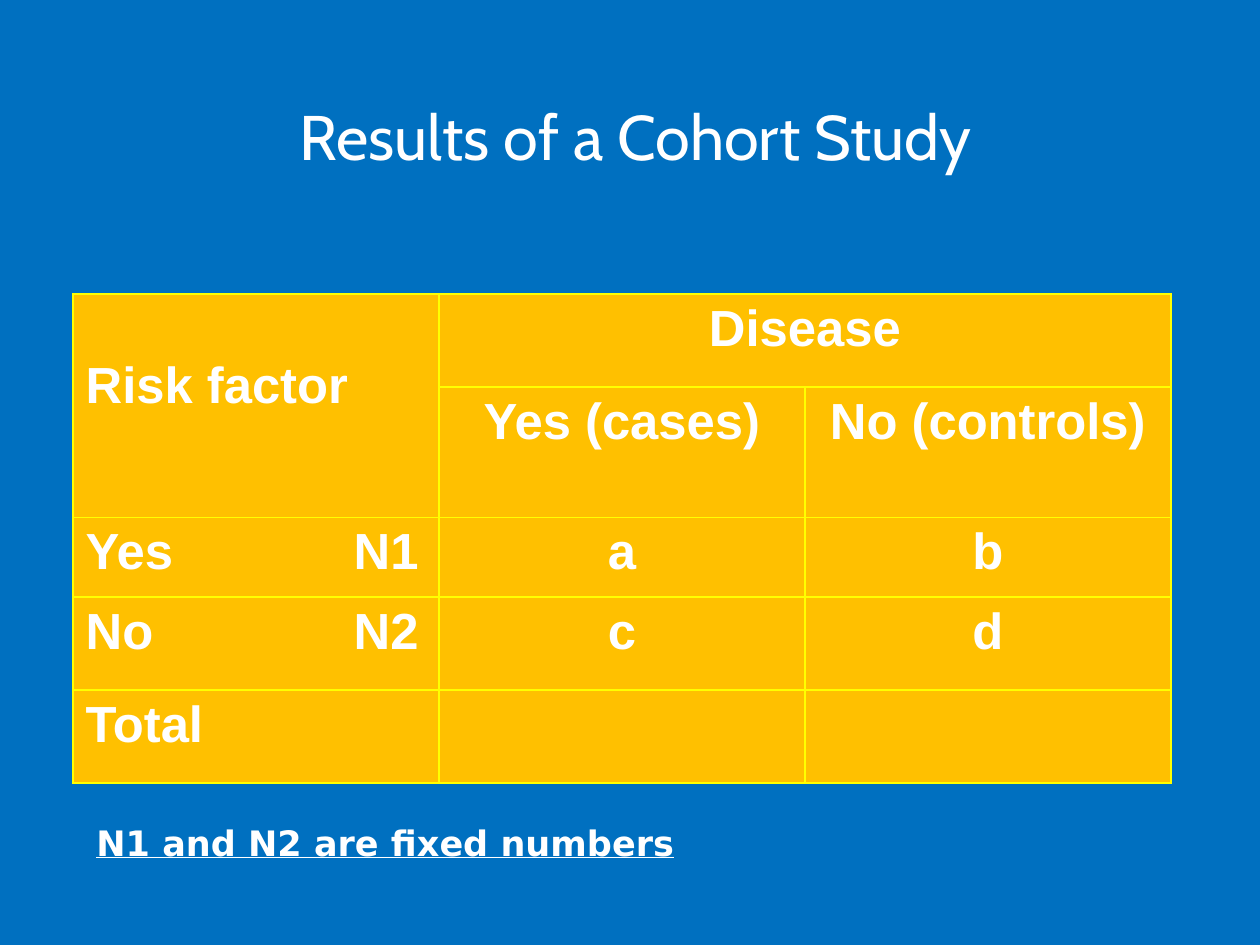
from pptx import Presentation
from pptx.dml.color import RGBColor
from pptx.enum.text import MSO_ANCHOR as Anchor, PP_ALIGN as Align
from pptx.oxml import parse_xml
from pptx.oxml.ns import nsdecls
from pptx.util import Pt

SCALE = 914400 / 126
WHITE, BLUE, GOLD, YELLOW = "FFFFFF", "0070C0", "FFC000", "FFFF00"
ROWS = [
    ["Risk factor", "Disease", ""],
    ["", "Yes (cases)", "No (controls)"],
    ["Yes\tN1", "a", "b"],
    ["No\tN2", "c", "d"],
    ["Total", "", ""],
]
HEIGHTS = [93, 126, 80, 93, 93]


def px(n):
    return round(n * SCALE)


def hue(code):
    return RGBColor.from_string(code)


def style(frame, size, face, bold=False, line=False, align=Align.LEFT):
    for para in frame.paragraphs:
        para.alignment = align
        for run in para.runs:
            font = run.font
            font.size, font.name = Pt(size), face
            font.bold, font.underline = bold, line
            font.color.rgb = hue(WHITE)


def label(slide, box, text, anchor, **look):
    frame = slide.shapes.add_textbox(*map(px, box)).text_frame
    frame.word_wrap = True
    frame.vertical_anchor = anchor
    frame.text = text
    style(frame, **look)


def border(cell):
    props = cell._tc.get_or_add_tcPr()
    for side in "LRTB":
        props.append(parse_xml(
            f'<a:ln{side} {nsdecls("a")} w="12700"><a:solidFill>'
            f'<a:srgbClr val="{YELLOW}"/></a:solidFill></a:ln{side}>'))


def tab(para, pos):
    para._p.get_or_add_pPr().append(parse_xml(
        f'<a:tabLst {nsdecls("a")}><a:tab pos="{px(pos)}" algn="l"/></a:tabLst>'))


def grid(slide, box):
    left, top, width = box
    shape = slide.shapes.add_table(
        len(ROWS), 3, px(left), px(top), px(width), px(sum(HEIGHTS)))
    table = shape.table
    for col in table.columns:
        col.width = px(width / 3)
    for row, high in zip(table.rows, HEIGHTS):
        row.height = px(high)
    for r, words in enumerate(ROWS):
        for c, word in enumerate(words):
            cell = table.cell(r, c)
            border(cell)
            cell.fill.solid()
            cell.fill.fore_color.rgb = hue(GOLD)
            if not word:
                continue
            cell.text_frame.text = word
            style(cell.text_frame, 29, "Arial", bold=True,
                  align=Align.CENTER if c else Align.LEFT)
            if "\t" in word:
                tab(cell.text_frame.paragraphs[0], 268)
    table.cell(0, 0).merge(table.cell(1, 0))
    table.cell(0, 1).merge(table.cell(0, 2))
    table.cell(0, 0).margin_top = px(63)


def main():
    deck = Presentation()
    deck.slide_width, deck.slide_height = px(1260), px(945)
    slide = deck.slides.add_slide(deck.slide_layouts[6])
    back = slide.background.fill
    back.solid()
    back.fore_color.rgb = hue(BLUE)
    label(slide, (32, 84, 1207, 95), "Results of a Cohort Study",
          Anchor.BOTTOM, size=36, face="Cabin", align=Align.CENTER)
    grid(slide, (73, 294, 1098))
    label(slide, (84, 815, 1050, 55), "N1 and N2 are fixed numbers",
          Anchor.TOP, size=20, face="DejaVu Sans", bold=True, line=True)
    deck.save("out.pptx")


if __name__ == "__main__":
    main()
